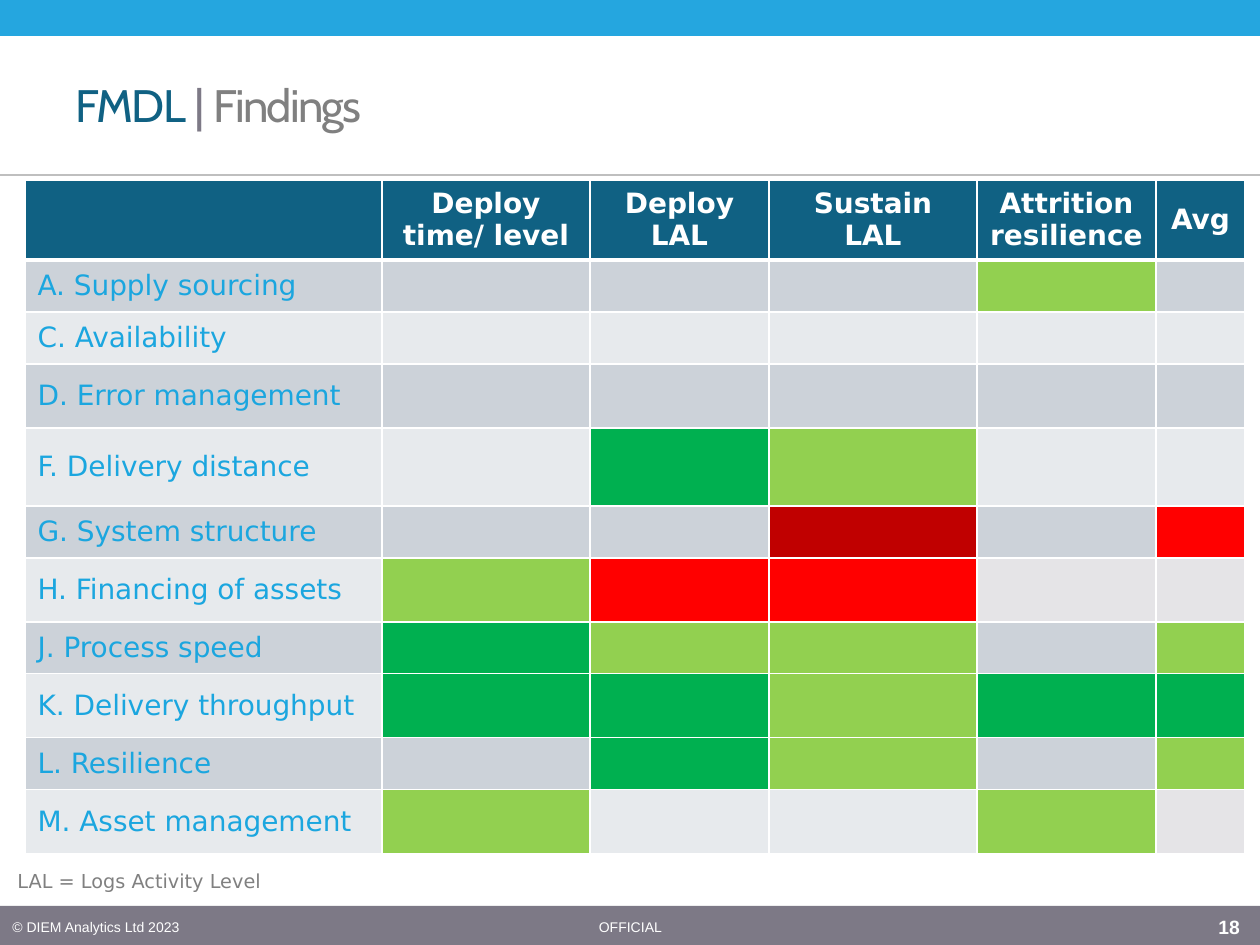
from lxml import etree
from pptx import Presentation
from pptx.dml.color import RGBColor
from pptx.enum.shapes import MSO_CONNECTOR, MSO_SHAPE
from pptx.enum.text import MSO_ANCHOR, PP_ALIGN
from pptx.oxml.ns import qn
from pptx.util import Pt

EMU_PER_PX = 914400 / 126
RECTANGLE = MSO_SHAPE.RECTANGLE
STRAIGHT = MSO_CONNECTOR.STRAIGHT
TOP, MIDDLE = MSO_ANCHOR.TOP, MSO_ANCHOR.MIDDLE
LEFT, CENTER = PP_ALIGN.LEFT, PP_ALIGN.CENTER

WHITE = RGBColor(0xFF, 0xFF, 0xFF)
SKY = RGBColor(0x25, 0xA6, 0xDF)
LABEL_BLUE = RGBColor(0x1B, 0xA6, 0xDF)
TEAL = RGBColor(0x10, 0x61, 0x83)
SLATE = RGBColor(0x7D, 0x79, 0x86)
GRAY = RGBColor(0x80, 0x80, 0x80)
RULE_GRAY = RGBColor(0xBF, 0xBF, 0xBF)
BAND_DARK = RGBColor(0xCC, 0xD2, 0xD9)
BAND_LIGHT = RGBColor(0xE7, 0xEA, 0xED)

# "." leaves a rating cell in the band colour of its row.
RATING_FILLS = {
    "G": RGBColor(0x00, 0xB0, 0x50),
    "g": RGBColor(0x92, 0xD0, 0x50),
    "r": RGBColor(0xFF, 0x00, 0x00),
    "R": RGBColor(0xC0, 0x00, 0x00),
    "n": RGBColor(0xE5, 0xE4, 0xE7),
}
HEADERS = ["", "Deploy time/ level", "Deploy LAL", "Sustain LAL",
           "Attrition resilience", "Avg"]
COLUMN_WIDTHS = [357, 208, 179, 208, 179, 89]
HEADER_HEIGHT = 78
FINDINGS = [
    ("A. Supply sourcing", 52, "...g."),
    ("C. Availability", 52, "....."),
    ("D. Error management", 64, "....."),
    ("F. Delivery distance", 78, ".Gg.."),
    ("G. System structure", 52, "..R.r"),
    ("H. Financing of assets", 64, "grrnn"),
    ("J. Process speed", 52, "Ggg.g"),
    ("K. Delivery throughput", 64, "GGgGG"),
    ("L. Resilience", 52, ".Gg.g"),
    ("M. Asset management", 64, "g..gn"),
]

TITLE = {"name": "Cabin", "size": Pt(26)}
FOOTER = {"name": "Arial", "size": Pt(8)}
PAGE_NUMBER = {"name": "Arial", "size": Pt(11), "bold": True}
NOTE = {"name": "DejaVu Sans", "size": Pt(11)}
HEADER = {"name": "DejaVu Sans", "size": Pt(16), "bold": True}
LABEL = {"name": "DejaVu Sans", "size": Pt(16), "bold": False}


def px(length):
    return round(length * EMU_PER_PX)


def add_run(paragraph, text, font_values, color):
    run = paragraph.add_run()
    run.text = text
    for key, value in font_values.items():
        setattr(run.font, key, value)
    run.font.color.rgb = color
    return run


def add_bar(slide, top, height, color):
    bar = slide.shapes.add_shape(RECTANGLE, 0, px(top), px(1260), px(height))
    bar.shadow.inherit = False
    bar.fill.solid()
    bar.fill.fore_color.rgb = color
    bar.line.fill.background()


def add_rule(slide, top):
    rule = slide.shapes.add_connector(STRAIGHT, 0, px(top), px(1260), px(top))
    rule.line.color.rgb = RULE_GRAY
    rule.line.width = Pt(0.75)
    etree.SubElement(rule._element.spPr, qn("a:effectLst"))


def add_text(slide, box, parts, font_values, align=LEFT, anchor=MIDDLE, wrap=True):
    """Add one line of (text, colour) parts and return its runs."""
    frame = slide.shapes.add_textbox(*map(px, box)).text_frame
    frame.word_wrap = wrap
    frame.vertical_anchor = anchor
    paragraph = frame.paragraphs[0]
    paragraph.alignment = align
    return [add_run(paragraph, text, font_values, color) for text, color in parts]


def add_title(slide, parts):
    for run in add_text(slide, (63, 45, 984, 118), parts, TITLE):
        run.font._element.set("spc", "-100")


def set_borders(cell, top, bottom):
    properties = cell._tc.get_or_add_tcPr()
    for side, points in (("L", 1), ("R", 1), ("T", top), ("B", bottom)):
        border = etree.SubElement(properties, qn(f"a:ln{side}"), w=str(Pt(points)))
        fill = etree.SubElement(border, qn("a:solidFill"))
        etree.SubElement(fill, qn("a:srgbClr"), val=str(WHITE))


def style_cell(cell, fill, top=1, bottom=1):
    set_borders(cell, top, bottom)
    cell.fill.solid()
    cell.fill.fore_color.rgb = fill
    cell.vertical_anchor = MIDDLE


def add_findings_table(slide):
    heights = [HEADER_HEIGHT] + [height for _, height, _ in FINDINGS]
    table = slide.shapes.add_table(
        len(heights), len(HEADERS), px(25), px(180),
        px(sum(COLUMN_WIDTHS)), px(sum(heights))).table
    table.horz_banding = False
    for column, width in zip(table.columns, COLUMN_WIDTHS):
        column.width = px(width)
    for row, height in zip(table.rows, heights):
        row.height = px(height)

    for index, heading in enumerate(HEADERS):
        cell = table.cell(0, index)
        style_cell(cell, TEAL, bottom=3)
        if heading:
            paragraph = cell.text_frame.paragraphs[0]
            paragraph.alignment = CENTER
            add_run(paragraph, heading, HEADER, WHITE)

    for row, (label, _, ratings) in enumerate(FINDINGS, start=1):
        band = BAND_DARK if row % 2 else BAND_LIGHT
        for column, rating in enumerate("." + ratings):
            style_cell(table.cell(row, column), RATING_FILLS.get(rating, band),
                       top=3 if row == 1 else 1)
        add_run(table.cell(row, 0).text_frame.paragraphs[0], label, LABEL, LABEL_BLUE)


def main():
    presentation = Presentation()
    presentation.slide_width, presentation.slide_height = px(1260), px(945)
    slide = presentation.slides.add_slide(presentation.slide_layouts[6])

    add_bar(slide, 906, 39, SLATE)
    add_bar(slide, -3, 39, SKY)
    add_rule(slide, 175)
    add_title(slide, [("FMDL ", TEAL), ("| ", SLATE), ("Findings", GRAY)])
    add_findings_table(slide)
    add_text(slide, (5, 863, 271, 36), [("LAL = Logs Activity Level", GRAY)], NOTE,
             anchor=TOP, wrap=False)
    add_text(slide, (0, 909, 343, 36), [("© DIEM Analytics Ltd 2023", WHITE)], FOOTER)
    add_text(slide, (459, 909, 343, 36), [("OFFICIAL", WHITE)], FOOTER, CENTER)
    add_text(slide, (1206, 909, 54, 36), [("18", WHITE)], PAGE_NUMBER)
    presentation.save("out.pptx")


if __name__ == "__main__":
    main()
